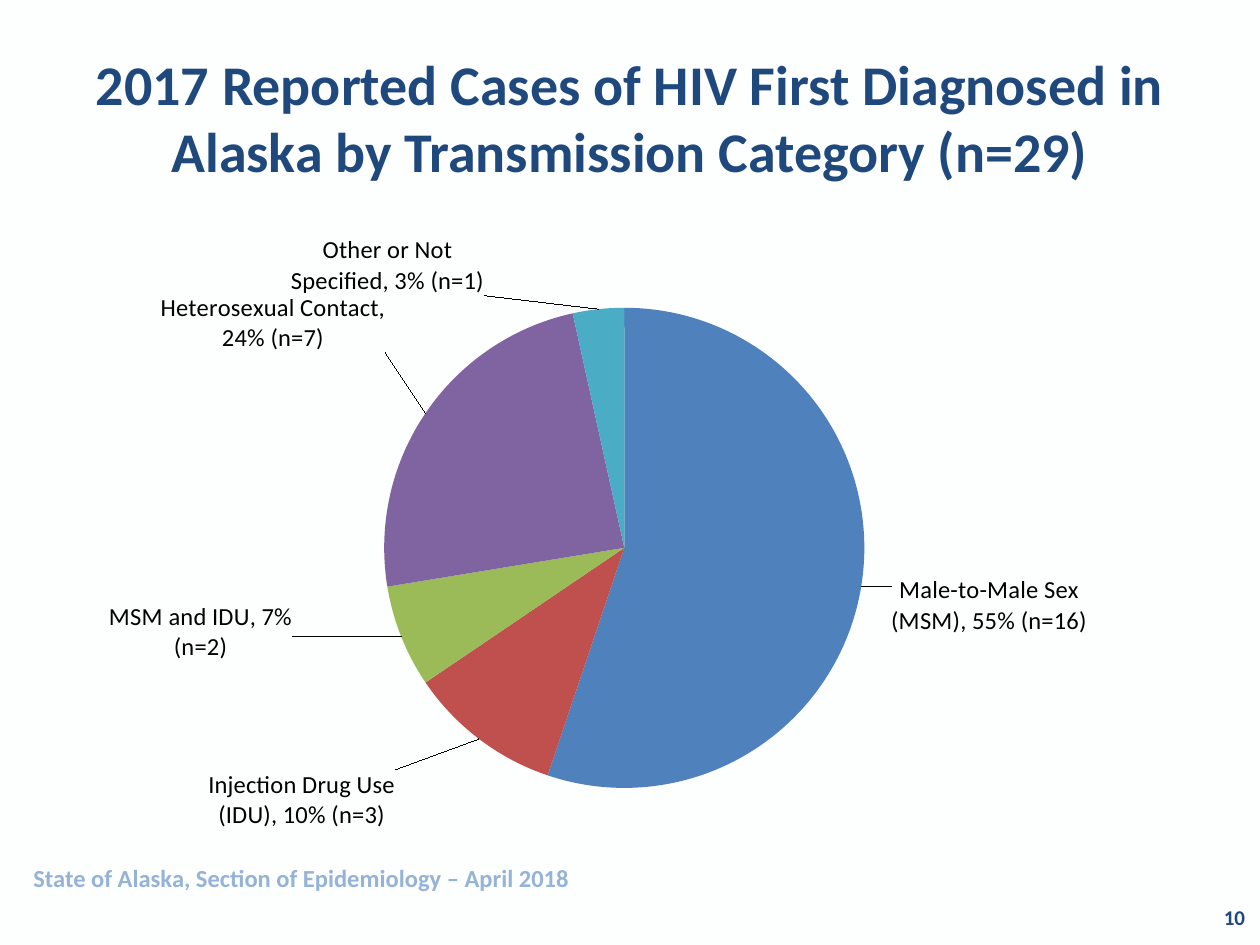
import pptx
import pptx.chart.data
import pptx.dml.color
import pptx.enum.chart
import pptx.enum.text
import pptx.oxml
import pptx.oxml.ns
import pptx.util

Pt = pptx.util.Pt
ALIGN = pptx.enum.text.PP_ALIGN
ANCHOR = pptx.enum.text.MSO_ANCHOR
FONT = "Calibri"
COLOURS = {"background": "FDFEFE", "navy": "1F497D", "footer": "95B3D7", "label": "000000"}

# category, cases, slice colour, label shift as a share of the chart's size
CATEGORIES = [
    ("Male-to-Male Sex (MSM)", 16, "4F81BD", (0.02, -0.02)),
    ("Injection Drug Use (IDU)", 3, "C0504D", (-0.07, 0.04)),
    ("MSM and IDU", 2, "9BBB59", (-0.09, -0.06)),
    ("Heterosexual Contact", 7, "8064A2", (-0.03, -0.09)),
    ("Other or Not Specified", 1, "4BACC6", (-0.1, -0.01)),
]


def rgb(value):
    return pptx.dml.color.RGBColor.from_string(value)


def format_font(font, size, colour, bold=False):
    font.name = FONT
    font.size = Pt(size)
    font.bold = bold
    font.color.rgb = rgb(colour)


def place(shape, left, top, width, height):
    shape.left, shape.top = Pt(left), Pt(top)
    shape.width, shape.height = Pt(width), Pt(height)


def write(shape, text, size, colour, align, anchor):
    frame = shape.text_frame
    frame.word_wrap = True
    frame.vertical_anchor = anchor
    frame.text = text
    paragraph = frame.paragraphs[0]
    paragraph.alignment = align
    format_font(paragraph.runs[0].font, size, colour, bold=True)


def add_text(slide, text, box, size, colour, align, anchor):
    shape = slide.shapes.add_textbox(*map(Pt, box))
    write(shape, text, size, colour, align, anchor)


def set_layout(parent, position, **values):
    """Put a manual chart layout into parent, at the given child position."""
    for old in parent.findall(pptx.oxml.ns.qn("c:layout")):
        parent.remove(old)
    items = "".join(f'<c:{name} val="{value}"/>' for name, value in values.items())
    parent.insert(position, pptx.oxml.parse_xml(
        f'<c:layout {pptx.oxml.ns.nsdecls("c")}><c:manualLayout>{items}'
        "</c:manualLayout></c:layout>"))


def add_pie(slide, box):
    data = pptx.chart.data.CategoryChartData()
    data.categories = [category[0] for category in CATEGORIES]
    data.add_series("Series 1", [category[1] for category in CATEGORIES])
    chart = slide.shapes.add_chart(
        pptx.enum.chart.XL_CHART_TYPE.PIE, *map(Pt, box), data).chart
    chart.has_title = False
    chart.has_legend = False
    format_font(chart.font, 18, COLOURS["label"])
    plot = chart.plots[0]
    plot.vary_by_categories = True
    plot_area = chart.element.find(".//" + pptx.oxml.ns.qn("c:plotArea"))
    set_layout(plot_area, 0, layoutTarget="inner", xMode="edge", yMode="edge",
               x=0.28, y=0.14, w=0.43, h=0.77)
    label_slices(plot.series[0])


def label_slices(series):
    labels = series.data_labels
    labels.show_value = labels.show_percentage = labels.show_category_name = True
    labels.position = pptx.enum.chart.XL_LABEL_POSITION.OUTSIDE_END
    format_font(labels.font, 14, COLOURS["label"])
    total = sum(category[1] for category in CATEGORIES)
    for index, (name, cases, colour, (shift_x, shift_y)) in enumerate(CATEGORIES):
        point = series.points[index]
        point.format.fill.solid()
        point.format.fill.fore_color.rgb = rgb(colour)
        label = point.data_label
        label.text_frame.text = f"{name}, {cases / total:.0%} (n={cases})"
        format_font(label.text_frame.paragraphs[0].runs[0].font, 14, COLOURS["label"])
        label.position = pptx.enum.chart.XL_LABEL_POSITION.OUTSIDE_END
    for element, category in zip(
            series.data_labels._element.findall(pptx.oxml.ns.qn("c:dLbl")), CATEGORIES):
        shift_x, shift_y = category[3]
        set_layout(element, 1, x=shift_x, y=shift_y)
        for flag in ("c:showVal", "c:showCatName", "c:showPercent"):
            element.find(pptx.oxml.ns.qn(flag)).set("val", "1")


def main():
    presentation = pptx.Presentation()
    presentation.slide_width, presentation.slide_height = Pt(720), Pt(540)
    slide = presentation.slides.add_slide(presentation.slide_layouts[5])
    slide.background.fill.solid()
    slide.background.fill.fore_color.rgb = rgb(COLOURS["background"])

    title = slide.shapes.title
    place(title, 36, 21.6, 648, 90)
    write(title, "2017 Reported Cases of HIV First Diagnosed in Alaska by "
          "Transmission Category (n=29)", 32, COLOURS["navy"], ALIGN.CENTER, ANCHOR.MIDDLE)
    add_text(slide, "10", (550.8, 509.76, 167.76, 28.8), 12, COLOURS["navy"],
             ALIGN.RIGHT, ANCHOR.MIDDLE)
    add_text(slide, "State of Alaska, Section of Epidemiology – April 2018",
             (12, 489.6, 552, 24.5), 14, COLOURS["footer"], ALIGN.LEFT, ANCHOR.TOP)
    add_pie(slide, (36, 126, 648, 356.4))
    presentation.save("out.pptx")


if __name__ == "__main__":
    main()
